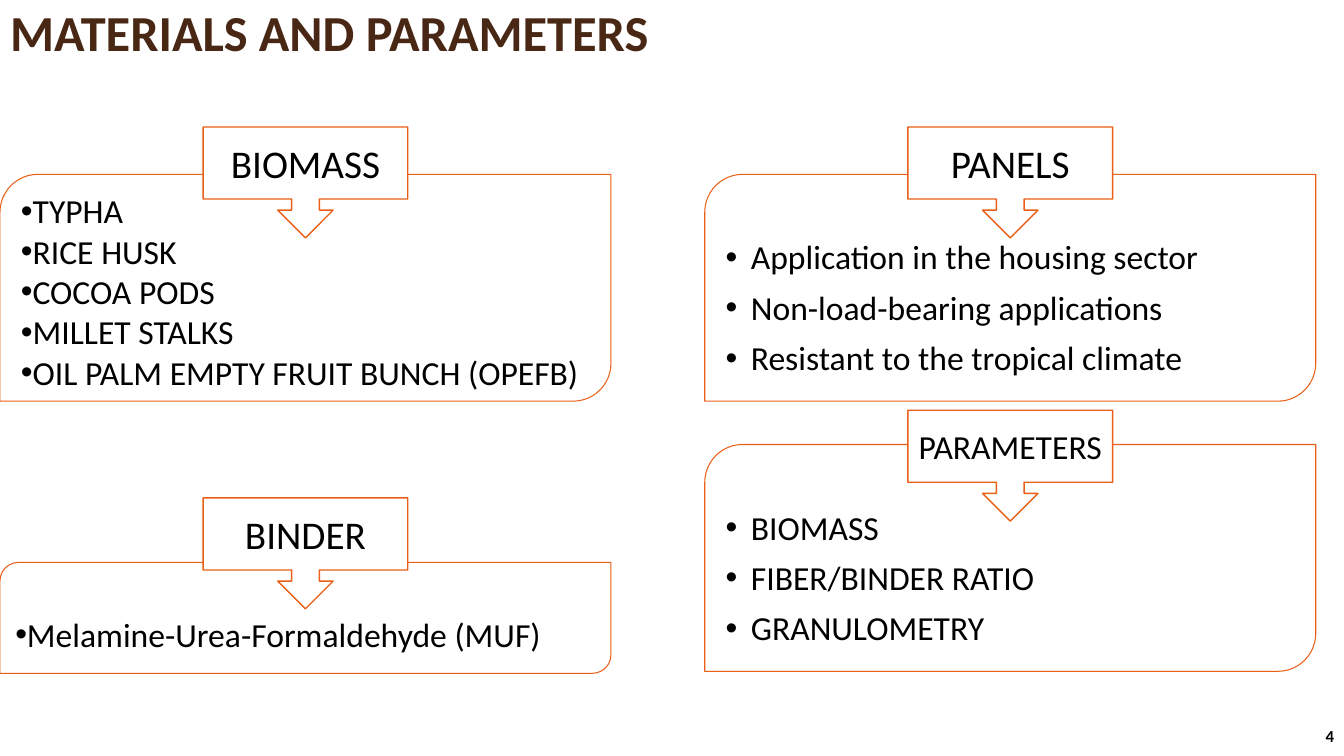
from lxml import etree
from pptx import Presentation
from pptx.dml.color import RGBColor
from pptx.enum.shapes import MSO_SHAPE as Shape
from pptx.enum.text import MSO_ANCHOR as Anchor, MSO_AUTO_SIZE as AutoSize, PP_ALIGN as Align
from pptx.oxml.ns import qn
from pptx.util import Inches, Pt

BLACK = RGBColor(0x00, 0x00, 0x00)
WHITE = RGBColor(0xFF, 0xFF, 0xFF)
BROWN = RGBColor(0x48, 0x27, 0x14)
ORANGE = RGBColor(0xEA, 0x5F, 0x17)


def write(shape, lines, size=24, color=BLACK, bold=False, align=Align.LEFT,
          anchor=Anchor.MIDDLE, bullet=False, indent=0, spacing=1.0, before=0):
    """Fill a shape with one paragraph per line, spaced only between lines."""
    frame = shape.text_frame
    frame.word_wrap = True
    frame.auto_size = AutoSize.NONE
    frame.vertical_anchor = anchor
    for index, line in enumerate(lines):
        paragraph = frame.paragraphs[0] if index == 0 else frame.add_paragraph()
        paragraph.text = line
        paragraph.alignment = align
        paragraph.line_spacing = spacing
        paragraph.space_before = Pt(before if index else 0)
        if bullet:
            properties = paragraph._p.get_or_add_pPr()
            properties.set("marL", str(Inches(indent)))
            properties.set("indent", str(-Inches(indent)))
            etree.SubElement(properties, qn("a:buFont")).set("typeface", "Arial")
            etree.SubElement(properties, qn("a:buChar")).set("char", "•")
        font = paragraph.font
        font.name = "Calibri"
        font.size = Pt(size)
        font.bold = bold
        font.color.rgb = color


def add_outlined(preset, left, top, width, height, line_width):
    shape = slide.shapes.add_shape(
        preset, Inches(left), Inches(top), Inches(width), Inches(height))
    shape.shadow.inherit = False
    shape.line.color.rgb = ORANGE
    shape.line.width = Pt(line_width)
    return shape


presentation = Presentation()
presentation.slide_width = Inches(13.33)
presentation.slide_height = Inches(7.5)
slide = presentation.slides.add_slide(presentation.slide_layouts[5])

title = slide.shapes.title
title.left, title.top = Inches(0), Inches(0)
title.width, title.height = Inches(10.02), Inches(0.69)
write(title, ["MATERIALS AND PARAMETERS"], size=36, color=BROWN, bold=True, spacing=0.9)

LEFT_COLUMN, RIGHT_COLUMN = 0, 6.99
PANEL_WIDTH, CALLOUT_WIDTH, CALLOUT_HEIGHT = 6.06, 2.03, 1.1
tight = {"indent": 0}
airy = {"indent": 0.25, "spacing": 0.9, "before": 10}

# heading, heading size, column, callout top, panel top, panel height, top inset, format, items
sections = [
    ("BIOMASS", 28, LEFT_COLUMN, 1.26, 1.73, 2.25, 0.05, tight,
     ["TYPHA", "RICE HUSK", "COCOA PODS", "MILLET STALKS",
      "OIL PALM EMPTY FRUIT BUNCH (OPEFB)"]),
    ("BINDER", 28, LEFT_COLUMN, 4.94, 5.58, 1.1, 0.46, tight,
     ["Melamine-Urea-Formaldehyde (MUF)"]),
    ("PANELS", 28, RIGHT_COLUMN, 1.26, 1.73, 2.25, 0.55, airy,
     ["Application in the housing sector", "Non-load-bearing applications",
      "Resistant to the tropical climate"]),
    ("PARAMETERS", 24, RIGHT_COLUMN, 4.07, 4.41, 2.25, 0.55, airy,
     ["BIOMASS", "FIBER/BINDER RATIO", "GRANULOMETRY"]),
]

for heading, size, left, callout_top, top, height, inset, style, items in sections:
    panel = add_outlined(Shape.ROUND_2_DIAG_RECTANGLE, left, top, PANEL_WIDTH, height, 0.75)
    panel.fill.background()
    panel.text_frame.margin_top = Inches(inset)
    write(panel, items, anchor=Anchor.TOP, bullet=True, **style)

    callout_left = left + (PANEL_WIDTH - CALLOUT_WIDTH) / 2
    callout = add_outlined(Shape.DOWN_ARROW_CALLOUT, callout_left, callout_top,
                           CALLOUT_WIDTH, CALLOUT_HEIGHT, 1)
    callout.fill.solid()
    callout.fill.fore_color.rgb = WHITE
    callout.text_frame.margin_left = callout.text_frame.margin_right = Inches(0.05)
    write(callout, [heading], size=size, align=Align.CENTER)

page_number = slide.shapes.add_textbox(Inches(11.72), Inches(7.1), Inches(1.61), Inches(0.4))
write(page_number, ["4"], size=12, bold=True, align=Align.RIGHT)

presentation.save("out.pptx")
